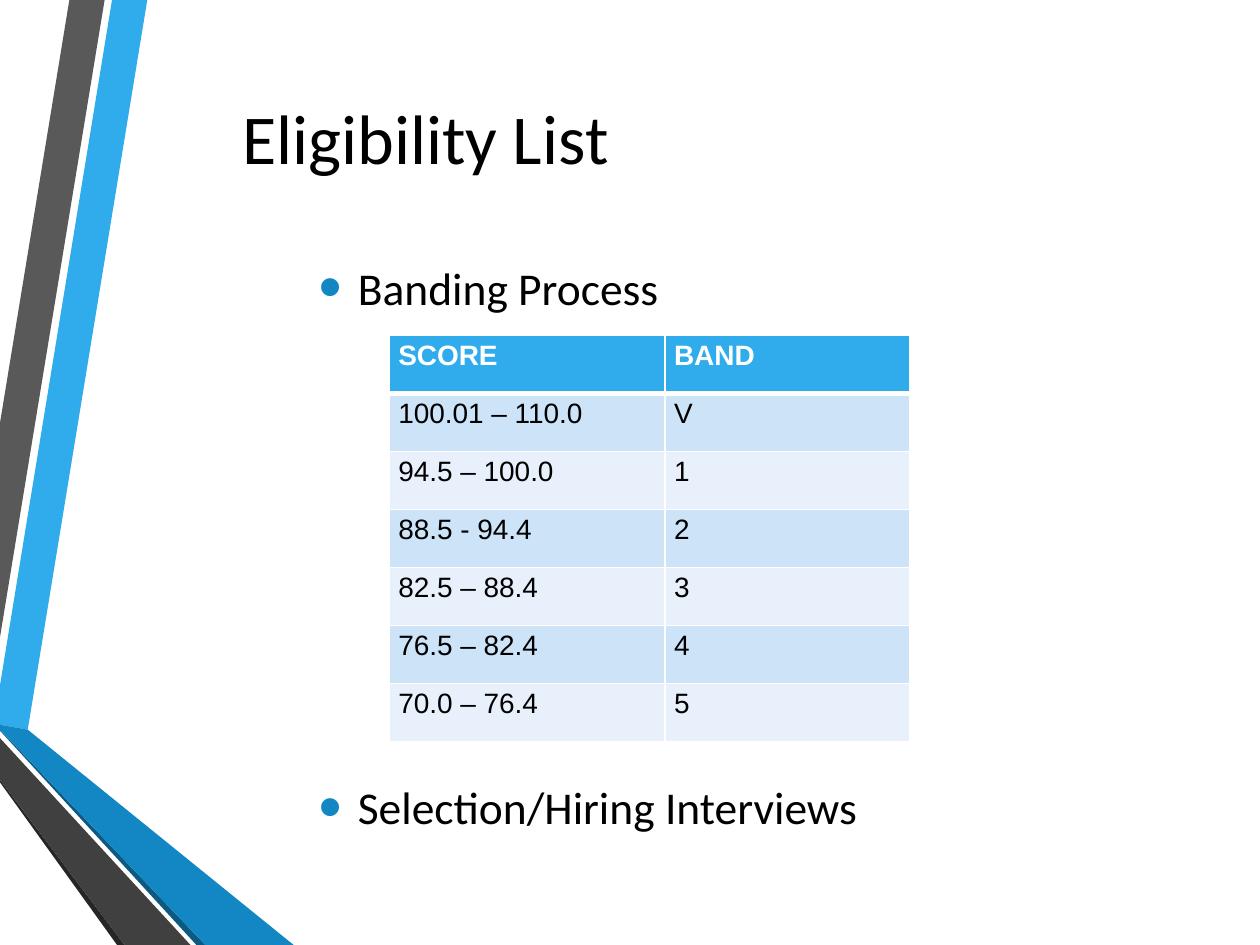
from lxml.etree import SubElement
from pptx import Presentation
from pptx.dml.color import RGBColor
from pptx.enum.text import MSO_ANCHOR, MSO_AUTO_SIZE, PP_ALIGN
from pptx.oxml.ns import qn
from pptx.util import Cm, Pt

BLACK = RGBColor(0x00, 0x00, 0x00)
WHITE = RGBColor(0xFF, 0xFF, 0xFF)
SKY = RGBColor(0x30, 0xAC, 0xEC)
BLUE = RGBColor(0x12, 0x87, 0xC3)
DEEP_BLUE = RGBColor(0x0C, 0x5A, 0x82)
GREY = RGBColor(0x59, 0x59, 0x59)
DARK_GREY = RGBColor(0x40, 0x40, 0x40)
CHARCOAL = RGBColor(0x26, 0x26, 0x26)
ROW_TINTS = (RGBColor(0xE8, 0xF1, 0xFB), RGBColor(0xCD, 0xE3, 0xF8))

SLIDE_WIDTH, SLIDE_HEIGHT = 25.4, 19.05

RIBBONS = [
    (SKY, [(0, 13.82), (0, 14.61), (0.56, 14.71), (2.97, 0), (2.26, 0)]),
    (GREY, [(2.11, 0), (1.4, 0), (0, 8.53), (0, 12.85)]),
    (CHARCOAL, [(0, 15.72), (0, 15.77), (2.36, SLIDE_HEIGHT), (2.51, SLIDE_HEIGHT)]),
    (DEEP_BLUE, [(0, 14.71), (0, 14.73), (3.96, SLIDE_HEIGHT), (4.14, SLIDE_HEIGHT)]),
    (BLUE, [(0, 14.71), (4.14, SLIDE_HEIGHT), (5.92, SLIDE_HEIGHT), (0.56, 14.71), (0, 14.61)]),
    (DARK_GREY, [(0, 15.72), (2.51, SLIDE_HEIGHT), (3.84, SLIDE_HEIGHT), (0, 14.88)]),
]

STEPS = [("Banding Process", 5), ("Selection/Hiring Interviews", 259.5)]

SCORE_BANDS = [
    ("SCORE", "BAND"),
    ("100.01 – 110.0", "V"),
    ("94.5 – 100.0", "1"),
    ("88.5 - 94.4", "2"),
    ("82.5 – 88.4", "3"),
    ("76.5 – 82.4", "4"),
    ("70.0 – 76.4", "5"),
]


def place(shape, left, top, width, height):
    shape.left, shape.top = Cm(left), Cm(top)
    shape.width, shape.height = Cm(width), Cm(height)


def style_font(paragraph, name, size, color, bold=False):
    font = paragraph.font
    font.name, font.size, font.bold = name, Pt(size), bold
    font.color.rgb = color


def add_ribbon(slide, depth, color, corners):
    points = [(Cm(x), Cm(y)) for x, y in corners]
    builder = slide.shapes.build_freeform(*points[0])
    builder.add_line_segments(points[1:], close=True)
    ribbon = builder.convert_to_shape()
    ribbon.shadow.inherit = False
    ribbon.fill.solid()
    ribbon.fill.fore_color.rgb = color
    ribbon.line.fill.background()
    slide.shapes.element.insert(2 + depth, ribbon.element)


def prepare_frame(placeholder):
    frame = placeholder.text_frame
    frame.word_wrap = True
    frame.auto_size = MSO_AUTO_SIZE.NONE
    frame.vertical_anchor = MSO_ANCHOR.MIDDLE
    return frame


def fill_title(title):
    place(title, 2.72, 1.27, 11.71, 2.97)
    heading = prepare_frame(title).paragraphs[0]
    heading.text = "Eligibility List"
    heading.alignment = PP_ALIGN.CENTER
    style_font(heading, "Calibri", 40, BLACK)


def add_bullet(paragraph):
    properties = paragraph._p.get_or_add_pPr()
    properties.set("marL", str(Cm(0.79)))
    properties.set("indent", str(Cm(-0.79)))
    bullet_color = SubElement(properties, qn("a:buClr"))
    SubElement(bullet_color, qn("a:srgbClr"), val=str(BLUE))
    SubElement(properties, qn("a:buSzPct"), val="145000")
    SubElement(properties, qn("a:buFont"), typeface="Arial")
    SubElement(properties, qn("a:buChar"), char="•")


def fill_steps(body):
    place(body, 6.17, 4.24, 15.11, 13.56)
    frame = prepare_frame(body)
    for index, (text, space_before) in enumerate(STEPS):
        step = frame.add_paragraph() if index else frame.paragraphs[0]
        step.text = text
        add_bullet(step)
        step.space_before, step.space_after = Pt(space_before), Pt(6)
        style_font(step, "Calibri", 26, BLACK)


def add_border(cell, side, width):
    border = SubElement(cell._tc.get_or_add_tcPr(), qn(f"a:ln{side}"), w=str(Pt(width)))
    fill = SubElement(border, qn("a:solidFill"))
    SubElement(fill, qn("a:srgbClr"), val=str(WHITE))


def fill_cell(cell, text, row):
    is_header = row == 0
    cell.margin_left = cell.margin_right = Cm(0.18)
    cell.margin_top = cell.margin_bottom = Cm(0.1)
    for side in "LRTB":
        meets_header_rule = (row, side) in ((0, "B"), (1, "T"))
        add_border(cell, side, 3 if meets_header_rule else 1)
    cell.fill.solid()
    cell.fill.fore_color.rgb = SKY if is_header else ROW_TINTS[row % 2]
    label = cell.text_frame.paragraphs[0]
    label.text = text
    style_font(label, "Arial", 16, WHITE if is_header else BLACK, is_header)


def add_score_table(slide):
    frame = slide.shapes.add_table(
        len(SCORE_BANDS), 2, Cm(7.85), Cm(6.76), Cm(10.49), Cm(8.19)
    )
    table = frame.table
    table.columns[0].width, table.columns[1].width = Cm(5.56), Cm(4.93)
    for row, texts in enumerate(SCORE_BANDS):
        table.rows[row].height = Cm(1.17)
        for column, text in enumerate(texts):
            fill_cell(table.cell(row, column), text, row)


def main():
    presentation = Presentation()
    presentation.slide_width = Cm(SLIDE_WIDTH)
    presentation.slide_height = Cm(SLIDE_HEIGHT)
    slide = presentation.slides.add_slide(presentation.slide_layouts[1])
    for depth, (color, corners) in enumerate(RIBBONS):
        add_ribbon(slide, depth, color, corners)
    fill_title(slide.shapes.title)
    fill_steps(slide.placeholders[1])
    add_score_table(slide)
    presentation.save("out.pptx")


if __name__ == "__main__":
    main()
